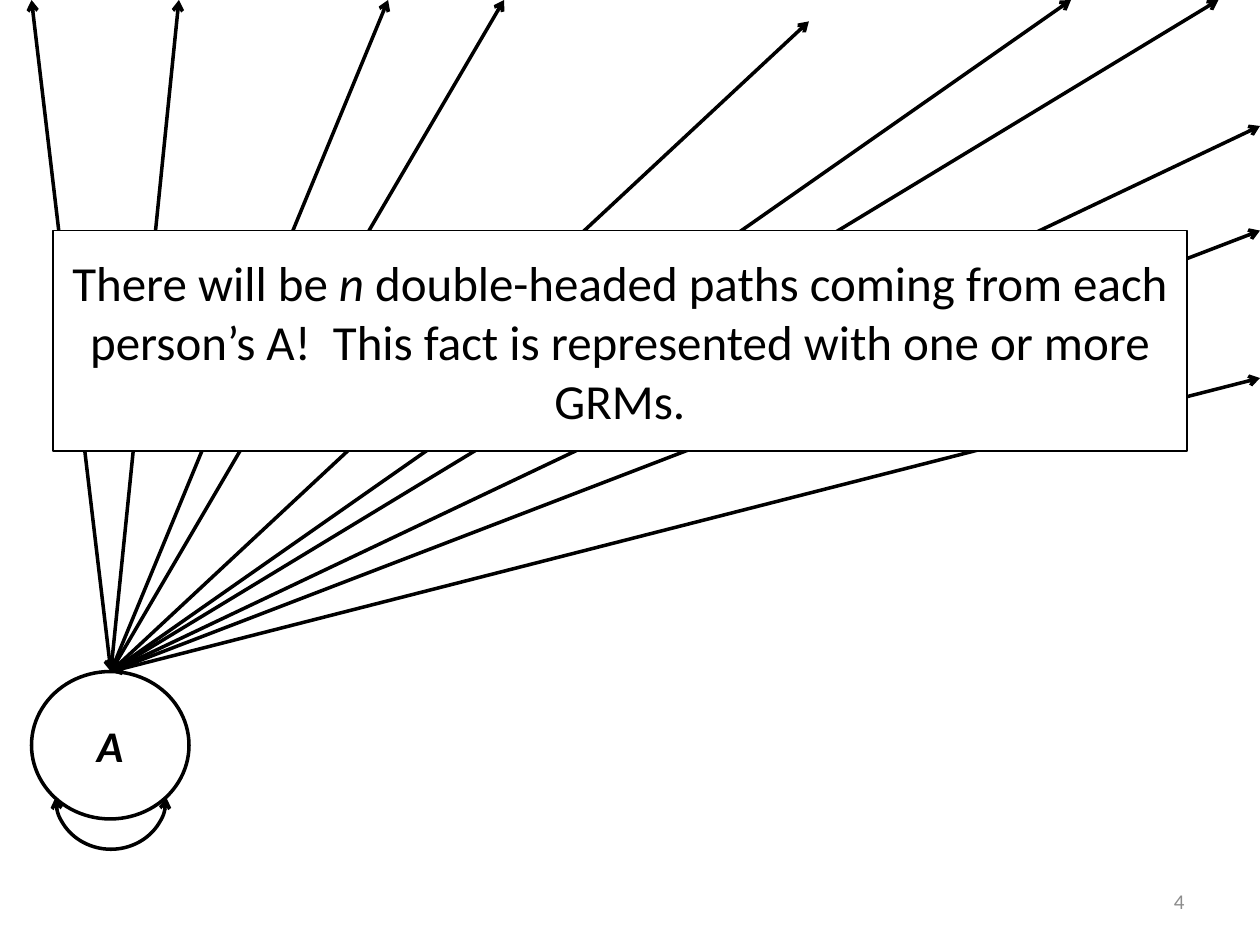
from lxml.etree import SubElement
from pptx import Presentation
from pptx.dml.color import RGBColor
from pptx.enum.shapes import MSO_CONNECTOR, MSO_SHAPE
from pptx.enum.text import MSO_ANCHOR, PP_ALIGN
from pptx.oxml.ns import qn
from pptx.util import Inches, Pt

BLACK = RGBColor(0x00, 0x00, 0x00)
WHITE = RGBColor(0xFF, 0xFF, 0xFF)
GRAY = RGBColor(0x8C, 0x8C, 0x8C)
FONT = "Calibri"

PATH_ORIGIN = (0.88, 5.33)
PATH_ENDS = [
    (0.25, 0), (1.42, 0), (3.08, 0), (4, 0), (6.42, 0.17),
    (8.5, 0), (9.67, 0), (10, 1), (10, 1.83), (10, 3),
]


def add_arrowheads(curve):
    outline = curve._element.spPr.get_or_add_ln()
    for end in ("a:headEnd", "a:tailEnd"):
        SubElement(outline, qn(end), type="arrow")


def draw_line(line, width):
    line.color.rgb = BLACK
    line.width = Pt(width)


def write(frame, runs, size, color=BLACK, align=PP_ALIGN.CENTER):
    frame.word_wrap = True
    frame.vertical_anchor = MSO_ANCHOR.MIDDLE
    paragraph = frame.paragraphs[0]
    paragraph.alignment = align
    for text, bold, italic in runs:
        run = paragraph.add_run()
        run.text = text
        run.font.name = FONT
        run.font.size = Pt(size)
        run.font.bold = bold
        run.font.italic = italic
        run.font.color.rgb = color


def add_outlined(slide, kind, box, width, fill=None):
    shape = slide.shapes.add_shape(kind, *map(Inches, box))
    shape.shadow.inherit = False
    if fill is None:
        shape.fill.background()
    else:
        shape.fill.solid()
        shape.fill.fore_color.rgb = fill
    draw_line(shape.line, width)
    return shape


def add_variance_loop(slide, box):
    loop = add_outlined(slide, MSO_SHAPE.ARC, box, 2)
    loop.adjustments[0] = 0
    loop.adjustments[1] = 180 * 60000 / 100000
    add_arrowheads(loop)


def add_double_headed_path(slide, start, end):
    path = slide.shapes.add_connector(
        MSO_CONNECTOR.STRAIGHT, *map(Inches, start + end))
    draw_line(path.line, 2)
    add_arrowheads(path)
    SubElement(path._element.spPr, qn("a:effectLst"))


def add_slide_number(slide, number):
    footer = slide.shapes.add_textbox(
        Inches(7.17), Inches(6.95), Inches(2.33), Inches(0.4))
    write(footer.text_frame, [(number, False, False)], 12, GRAY, PP_ALIGN.RIGHT)


def main():
    deck = Presentation()
    deck.slide_width = Inches(10)
    deck.slide_height = Inches(7.5)
    slide = deck.slides.add_slide(deck.slide_layouts[6])

    add_slide_number(slide, "4")
    person = add_outlined(slide, MSO_SHAPE.OVAL, (0.25, 5.33, 1.25, 1.17), 2)
    write(person.text_frame, [("A", True, True)], 25)
    add_variance_loop(slide, (0.44, 5.92, 0.88, 0.82))
    for end in PATH_ENDS:
        add_double_headed_path(slide, PATH_ORIGIN, end)

    message = add_outlined(
        slide, MSO_SHAPE.RECTANGLE, (0.42, 1.83, 9, 1.75), 1, WHITE)
    write(message.text_frame, [
        ("There will be ", False, False),
        ("n", False, True),
        (" double-headed paths coming from each person’s A!  "
         "This fact is represented with one or more GRMs.", False, False),
    ], 28)

    deck.save("out.pptx")


if __name__ == "__main__":
    main()
